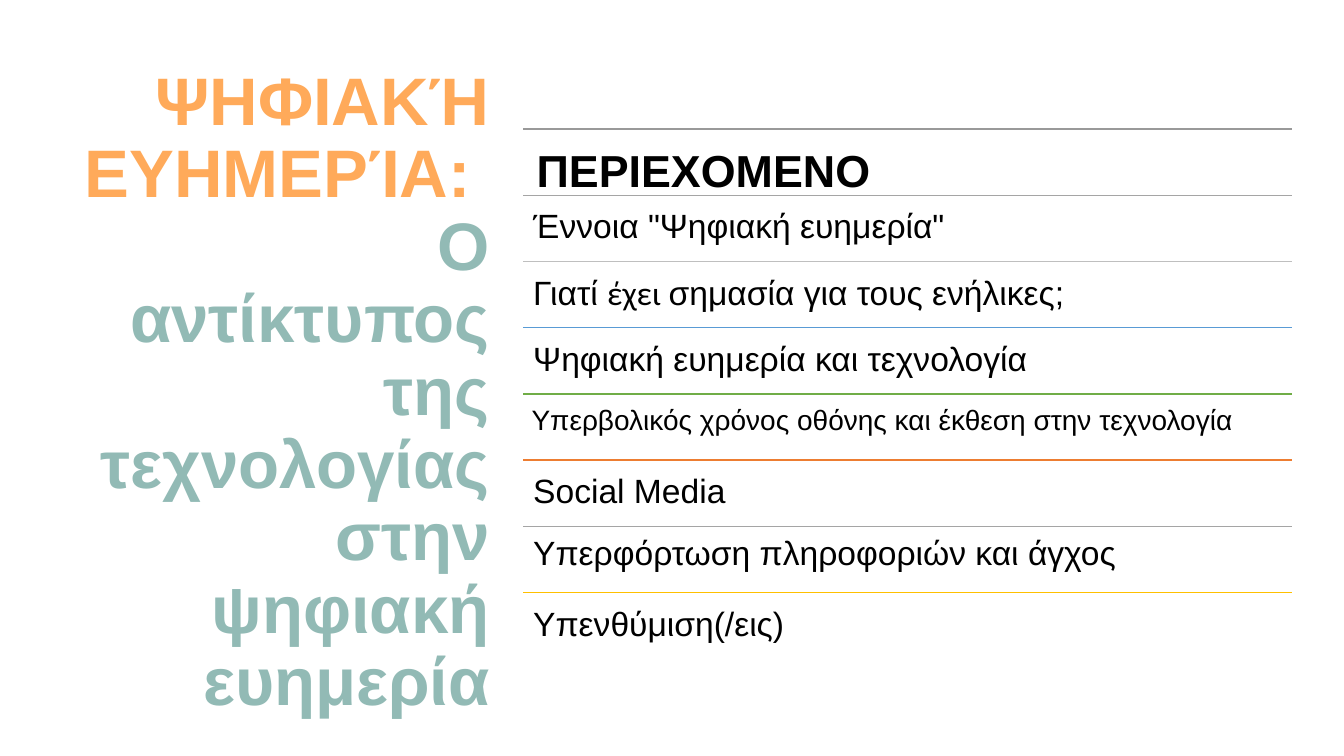
from pptx import Presentation
from pptx import util as u
from pptx.dml import color
from pptx.enum import shapes, text
from pptx.oxml import ns
from lxml import etree

Pt = u.Pt
HUES = {
    "title": "FFAA5A", "sub": "92BAB5", "ink": "000000",
    "dark": "999999", "gray": "A5A5A5", "pale": "BFBFBF",
    "blue": "599BD5", "green": "70AD47", "orange": "ED7D31", "gold": "FFC000",
}
LEFT, TOP, WIDTH, STEP = 373.7, 92.2, 549.4, 47.3

ROWS = [
    ("dark", 32, 1, ["ΠΕΡΙΕΧΟΜΕΝΟ"]),
    ("gray", 24, 1, ["Έννοια \"Ψηφιακή ευημερία\""]),
    ("pale", 24, 1, ["Γιατί ", "έχει ", "σημασία για τους ενήλικες;"]),
    ("blue", 24, 1, ["Ψηφιακή ευημερία και τεχνολογία"]),
    ("green", 20, 1, ["Υπερβολικός χρόνος οθόνης και έκθεση στην τεχνολογία"]),
    ("orange", 24, 1, ["Social Media"]),
    ("gray", 24, 0.9, ["Υπερφόρτωση πληροφοριών και άγχος"]),
    ("gold", 24, 1, ["Υπενθύμιση(/εις)"]),
]


def rgb(hue):
    return color.RGBColor.from_string(HUES[hue])


def style(run, size, hue, bold=False, face="Arial"):
    font = run.font
    font.size, font.bold, font.name = Pt(size), bold, face
    font.color.rgb = rgb(hue)


def inset(frame, side, top):
    frame.margin_left = frame.margin_right = Pt(side)
    frame.margin_top = frame.margin_bottom = Pt(top)
    frame.word_wrap = True
    frame.auto_size = text.MSO_AUTO_SIZE.NONE


def add_title(slide):
    title = slide.shapes.title
    title.left, title.top = Pt(37.4), Pt(61.2)
    title.width, title.height = Pt(319.7), Pt(440)
    frame = title.text_frame
    inset(frame, 7.2, 3.6)
    frame.vertical_anchor = text.MSO_ANCHOR.MIDDLE
    par = frame.paragraphs[0]
    par.text = ("ΨΗΦΙΑΚΉ ΕΥΗΜΕΡΊΑ: \v"
                "Ο αντίκτυπος της τεχνολογίας στην ψηφιακή ευημερία")
    par.alignment = text.PP_ALIGN.RIGHT
    par.line_spacing = 0.9
    for run, hue in zip(par.runs, ("title", "sub")):
        style(run, 48, hue, True)


def add_rule(group, top, hue):
    rule = group.shapes.add_connector(
        shapes.MSO_CONNECTOR.STRAIGHT,
        Pt(LEFT), Pt(top), Pt(LEFT + WIDTH), Pt(top))
    rule.line.color.rgb = rgb(hue)
    rule.line.width = Pt(1)
    etree.SubElement(rule._element.spPr, ns.qn("a:effectLst"))


def add_item(group, top, size, space, parts):
    box = group.shapes.add_textbox(Pt(LEFT), Pt(top), Pt(WIDTH), Pt(STEP))
    frame = box.text_frame
    inset(frame, size * 0.3, size * 0.3)
    par = frame.paragraphs[0]
    par.line_spacing = space
    for part in parts:
        run = par.add_run()
        run.text = part
        face = "Calibri" if part == "έχει " else "Arial"
        style(run, size, "ink", size == 32, face)


def main():
    deck = Presentation()
    deck.slide_width, deck.slide_height = Pt(960), Pt(540)
    slide = deck.slides.add_slide(deck.slide_layouts[5])
    add_title(slide)
    group = slide.shapes.add_group_shape()
    for row, (hue, size, space, parts) in enumerate(ROWS):
        top = TOP + row * STEP
        add_rule(group, top, hue)
        add_item(group, top, size, space, parts)
    deck.save("out.pptx")


if __name__ == "__main__":
    main()
